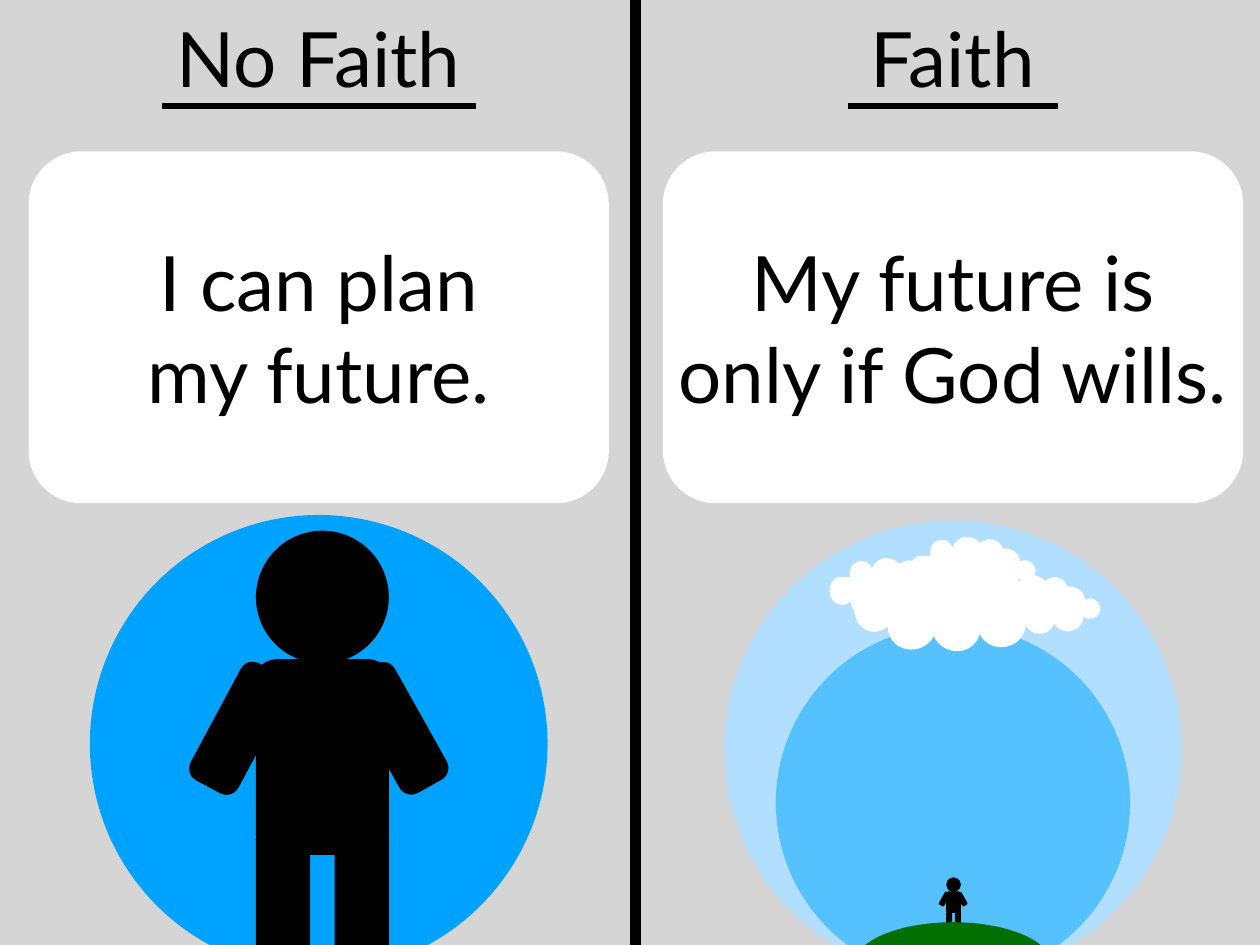
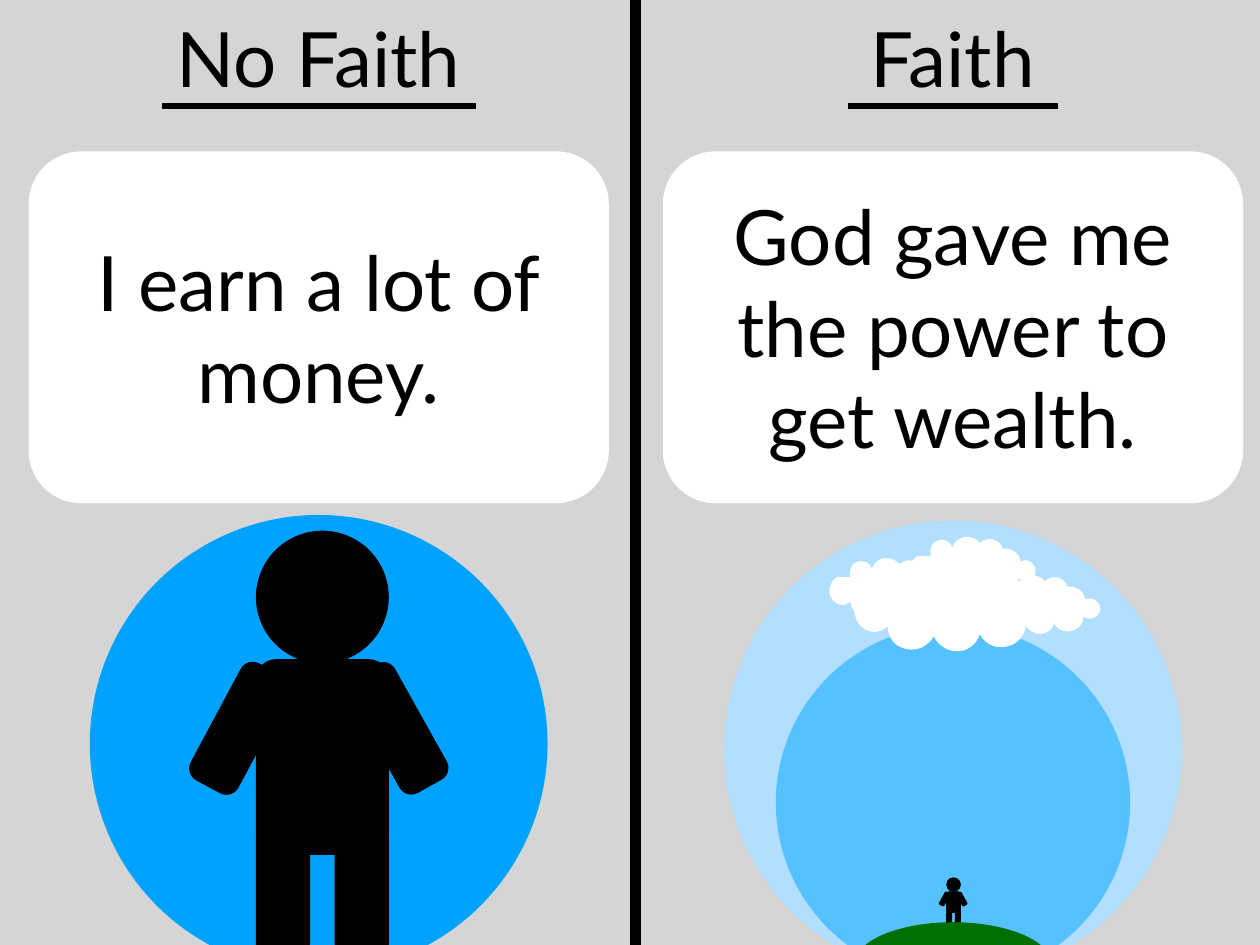
from dataclasses import dataclass
from typing import Any

from lxml import etree
from pptx import Presentation
from pptx.dml.color import RGBColor
from pptx.enum import shapes as kinds, text as txt
from pptx.oxml import ns
from pptx.util import Pt

WIDE, HIGH = 1024, 768
FONT, SIZE = "Lato", 62
OVAL, ROUND, RECT = (kinds.MSO_SHAPE.OVAL, kinds.MSO_SHAPE.ROUNDED_RECTANGLE,
                     kinds.MSO_SHAPE.RECTANGLE)

COLORS = {
    "back": "D5D5D5",
    "ink": "000000",
    "white": "FFFFFF",
    "blue": "00A2FF",
    "pale": "B2DFFF",
    "sky": "56C1FF",
    "hill": "027001",
}


@dataclass(frozen=True)
class Side:
    title: str
    mid: float      # centre line of the column
    rule: float     # length of the line under the title
    wide: float     # text box width
    high: float     # text box height


@dataclass(frozen=True)
class Part:
    kind: Any
    x: float
    y: float
    w: float
    h: float
    adj: float | None = None
    turn: float = 0


@dataclass(frozen=True)
class Cloud:
    x: float
    y: float
    wide: float


SIDES = (Side("No Faith", 259, 255, 436, 176),
         Side("Faith", 774.5, 170, 456.5, 260))

# Body parts, measured from the top left of the head
BODY = (
    Part(OVAL, 0, 0, 108, 108),
    Part(ROUND, 0, 104.4, 108, 159, 0.15),
    Part(ROUND, 0, 239, 44, 108, 0.25),
    Part(ROUND, 64, 239, 44, 108, 0.25),
    Part(ROUND, -35.3, 106.6, 44, 108, 0.25, 28.2),
    Part(ROUND, 92.9, 106.6, 44, 108, 0.25, 330.8),
)

# Cloud outline on a grid: each row is two handles and an end point
START, GRID = (2, 67), (224, 105)
CURVES = (
    (4, 75, 11, 81, 19, 83), (26, 84, 33, 82, 38, 77),
    (38, 84, 41, 92, 47, 97), (61, 108, 82, 104, 90, 88),
    (95, 99, 107, 106, 119, 105), (130, 104, 139, 96, 142, 86),
    (149, 99, 164, 104, 178, 98), (188, 94, 194, 84, 194, 74),
    (205, 83, 222, 76, 224, 62), (225, 48, 210, 37, 197, 44),
    (196, 35, 191, 28, 183, 24), (178, 21, 172, 20, 166, 21),
    (162, 10, 152, 3, 140, 4), (134, 5, 129, 7, 125, 11),
    (119, 3, 109, 0, 99, 0), (88, 1, 79, 9, 76, 19),
    (73, 9, 62, 3, 52, 6), (40, 8, 33, 22, 38, 34),
    (30, 34, 22, 34, 14, 34), (10, 36, 6, 40, 4, 44),
    (0, 51, -1, 60, 2, 67),
)
CLOUDS = (Cloud(694, 453.6, 161.3), Cloud(674, 453.6, 102.2),
          Cloud(792, 467.3, 102.2), Cloud(739.4, 436.3, 102.2))

# Text of the left and right cards on each slide
CARDS = (
    ("I can plan\nmy future.", "My future is only if God wills."),
    ("I earn a lot of money.", "God gave me the power to get wealth."),
)


def color(name: str) -> RGBColor:
    return RGBColor.from_string(COLORS[name])


def paint(shape: Any, name: str) -> None:
    shape.shadow.inherit = False
    shape.fill.solid()
    shape.fill.fore_color.rgb = color(name)
    shape.line.fill.background()


def block(host: Any, part: Part, name: str) -> None:
    shape = host.shapes.add_shape(part.kind, Pt(part.x), Pt(part.y),
                                  Pt(part.w), Pt(part.h))
    if part.adj is not None:
        shape.adjustments[0] = part.adj
    shape.rotation = part.turn
    paint(shape, name)


def disc(host: Any, mid: float, top: float, wide: float, high: float,
         name: str) -> None:
    block(host, Part(OVAL, mid - wide / 2, top, wide, high), name)


def rule(host: Any, x1: float, y1: float, x2: float, y2: float,
         width: float) -> None:
    line = host.shapes.add_connector(kinds.MSO_CONNECTOR.STRAIGHT,
                                     Pt(x1), Pt(y1), Pt(x2), Pt(y2))
    line.line.color.rgb = color("ink")
    line.line.width = Pt(width)
    etree.SubElement(line.element.spPr, ns.qn("a:effectLst"))


def words(host: Any, copy: str, mid: float, top: float, wide: float,
          high: float) -> None:
    box = host.shapes.add_textbox(Pt(mid - wide / 2), Pt(top), Pt(wide),
                                  Pt(high))
    frame = box.text_frame
    frame.word_wrap = True
    frame.auto_size = txt.MSO_AUTO_SIZE.SHAPE_TO_FIT_TEXT
    frame.vertical_anchor = txt.MSO_ANCHOR.MIDDLE
    frame.margin_left = frame.margin_right = Pt(4)
    frame.margin_top = frame.margin_bottom = Pt(4)
    for num, row in enumerate(copy.split("\n")):
        para = frame.add_paragraph() if num else frame.paragraphs[0]
        para.alignment = txt.PP_ALIGN.CENTER
        run = para.add_run()
        run.text = row
        run.font.name = FONT
        run.font.size = Pt(SIZE)
        run.font.color.rgb = color("ink")


def person(host: Any, x: float, y: float, scale: float) -> None:
    for part in BODY:
        block(host, Part(part.kind, x + part.x * scale, y + part.y * scale,
                         part.w * scale, part.h * scale, part.adj, part.turn),
              "ink")


def puff(host: Any, cloud: Cloud) -> None:
    wide, high = GRID
    pen = host.shapes.build_freeform(0, 0, scale=Pt(cloud.wide) / wide)
    pen.add_line_segments([(wide, 0), (wide, high)], close=True)
    shape = pen.convert_to_shape(Pt(cloud.x), Pt(cloud.y))
    paint(shape, "white")

    # Swap the straight edges for cubic curves
    route = next(shape.element.iter(ns.qn("a:path")))
    for old in list(route):
        route.remove(old)
    for tag, row in (("a:moveTo", START),
                     *(("a:cubicBezTo", row) for row in CURVES)):
        move = etree.SubElement(route, ns.qn(tag))
        for x, y in zip(row[::2], row[1::2]):
            etree.SubElement(move, ns.qn("a:pt"), x=str(x), y=str(y))
    etree.SubElement(route, ns.qn("a:close"))


def scene(slide: Any) -> None:
    left, right = (side.mid for side in SIDES)
    block(slide, Part(RECT, 0, -2, WIDE, 772), "back")

    # Large person on the left
    disc(slide, left, 418.5, 372, 372, "blue")
    person(slide.shapes.add_group_shape(), 208, 431.3, 1)

    # Small person under the sky on the right
    view = slide.shapes.add_group_shape()
    disc(view, right, 423, 372, 372, "pale")
    disc(view, right, 508.3, 288, 288, "sky")
    person(view, 769, 713, 0.11)
    disc(view, right, 749.5, 161, 69, "hill")
    for cloud in CLOUDS:
        puff(view, cloud)

    # Divider
    rule(slide, 516.7, 776, 516.7, -8.6, 9)


def card(slide: Any, side: Side, copy: str) -> None:
    group = slide.shapes.add_group_shape()
    block(group, Part(ROUND, side.mid - 235.8, 123, 471.6, 286, 0.15), "white")
    words(group, copy, side.mid, 265.6 - side.high / 2, side.wide, side.high)


def head(slide: Any, side: Side) -> None:
    group = slide.shapes.add_group_shape()
    words(group, side.title, side.mid, 0.5, 456.5, 92)
    half = side.rule / 2
    rule(group, side.mid + half, 86.4, side.mid - half, 86.4, 5)


def main() -> None:
    deck = Presentation()
    deck.slide_width, deck.slide_height = Pt(WIDE), Pt(HIGH)
    for pair in CARDS:
        slide = deck.slides.add_slide(deck.slide_layouts[6])
        scene(slide)
        for side, copy in zip(SIDES, pair):
            card(slide, side, copy)
        for side in SIDES:
            head(slide, side)
    deck.save("out.pptx")


if __name__ == "__main__":
    main()
